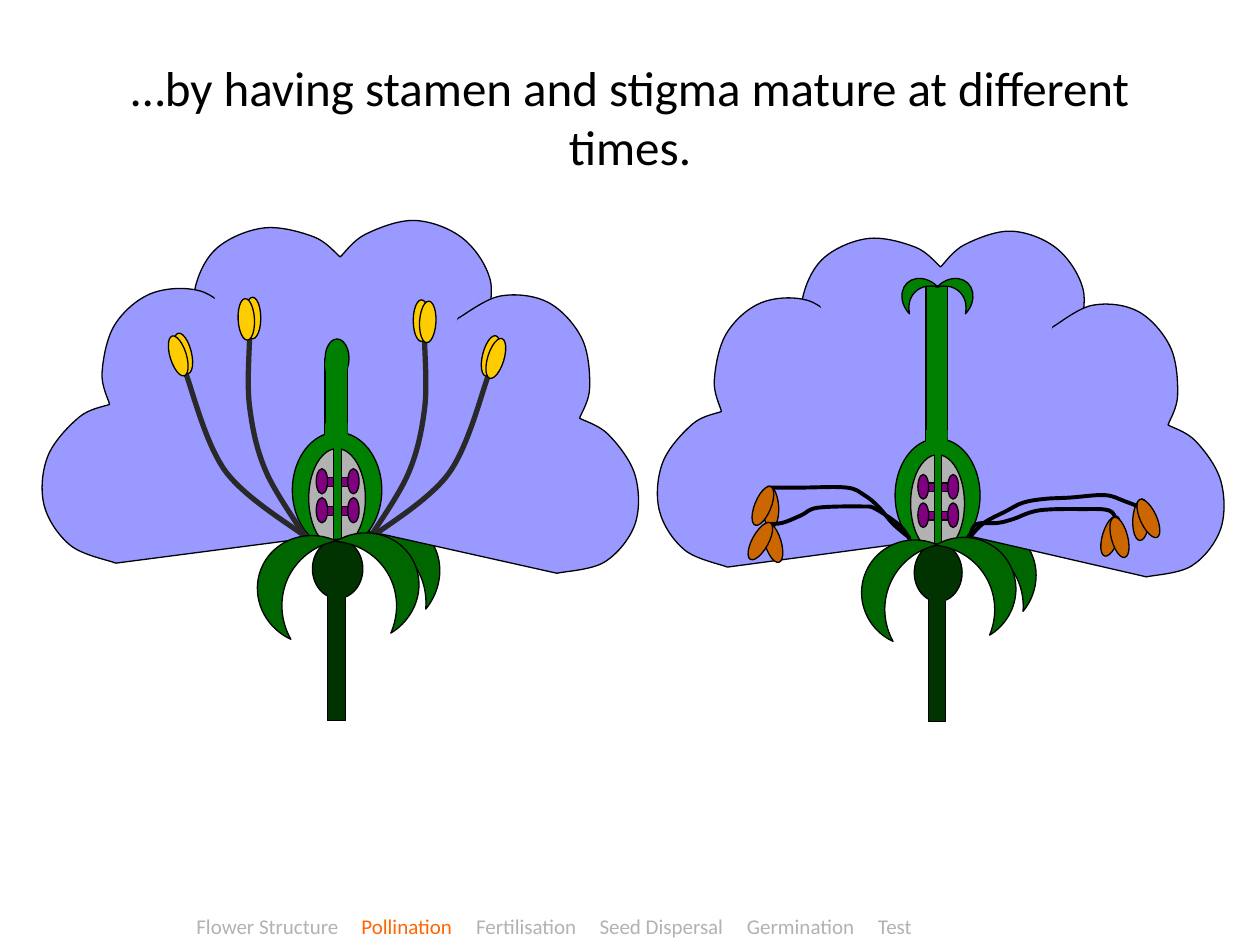
from collections import namedtuple

from lxml.etree import SubElement
from pptx import Presentation
from pptx.dml.color import RGBColor
from pptx.enum.shapes import MSO_SHAPE as Kind
from pptx.enum.text import MSO_ANCHOR as Anchor, PP_ALIGN as Align
from pptx.oxml.ns import qn
from pptx.util import Pt

PX = 9144  # EMU in one px: 100 px to the inch

BLACK = RGBColor(0x00, 0x00, 0x00)
GREY = RGBColor(0xB2, 0xB2, 0xB2)
ORANGE = RGBColor(0xFF, 0x66, 0x00)
LILAC = RGBColor(0x99, 0x99, 0xFF)
GREEN = RGBColor(0x00, 0x80, 0x00)
SEPAL_GREEN = RGBColor(0x00, 0x66, 0x00)
STEM_GREEN = RGBColor(0x00, 0x33, 0x00)
PURPLE = RGBColor(0x80, 0x00, 0x80)
YELLOW = RGBColor(0xFF, 0xCC, 0x00)
BROWN = RGBColor(0xCC, 0x66, 0x00)
CHARCOAL = RGBColor(0x29, 0x29, 0x29)

# A frame maps the flower's own px to slide px.
Frame = namedtuple("Frame", "x_scale x_shift y_scale y_shift")
PLAIN = Frame(1, 0, 1, 0)
SMALLER = Frame(0.95, 490, 0.98, 12)

# Each petal is a first lobe, the point it grows from, and a second lobe.
PETALS = [
    ([(270, 204), (249, 188), (209, 181), (171, 198), (154, 233), (159, 271)],
     [(281, 428)],
     [(386, 261), (389, 222), (367, 189), (329, 175), (290, 186), (270, 204)]),
    ([(460, 332), (468, 308), (462, 269), (435, 240), (397, 235), (363, 253)],
     [(254, 413)],
     [(442, 455), (480, 446), (504, 416), (504, 377), (483, 345), (460, 332)]),
    ([(87, 321), (63, 331), (38, 362), (35, 401), (56, 433), (92, 447)],
     [(284, 422)],
     [(191, 253), (159, 231), (120, 233), (91, 258), (81, 296), (87, 321)]),
]

YOUNG_FILAMENTS = [
    [(292, 429), (324, 376), (337, 324), (337, 271)],
    [(291, 429), (356, 376), (388, 297)],
]
YOUNG_ANTHERS = [(328, 238, 0), (333, 239, 3.1), (383, 266, 14.1), (387, 268, 17)]
MIRROR_SUM = 535  # x of a point plus x of its mirrored point
MIRROR_RISE = 2

OLD_BACK_ANTHERS = [(899, 396, 3.1), (875, 409, 17), (605, 386, -3.1), (607, 414, -17)]
# Each stamen is a filament and the anther in front of it.
OLD_STAMENS = [
    ([(770, 425), (775, 416), (792, 415), (804, 412), (825, 405), (860, 404),
      (880, 405), (886, 412)], (882, 410, -15)),
    ([(770, 426), (781, 415), (798, 406), (812, 399), (829, 396), (849, 395),
      (877, 393), (893, 398), (906, 403)], (905, 395, -24.7)),
    ([(722, 428), (714, 417), (695, 404), (685, 402), (649, 403), (636, 409),
      (621, 415), (609, 416)], (597, 413, 28.7)),
    ([(722, 427), (709, 416), (697, 402), (686, 393), (672, 387), (636, 387),
      (609, 387)], (599, 385, 22)),
]

MENU = ["Flower Structure", "Pollination", "Fertilisation", "Seed Dispersal",
        "Germination", "Test"]
MENU_STOPS = [131, 222, 320, 437, 541]


def add_part(shapes, kind, box, fill, rotation=0, outlined=True, frame=PLAIN):
    x, y, width, height = box
    part = shapes.add_shape(
        kind,
        round((x * frame.x_scale + frame.x_shift) * PX),
        round((y * frame.y_scale + frame.y_shift) * PX),
        round(width * frame.x_scale * PX),
        round(height * frame.y_scale * PX))
    part.rotation = rotation
    paint(part, fill, BLACK if outlined else None, 0.75)


def add_outline(shapes, lobes, fill, line, weight, frame=PLAIN):
    """Draw curved lobes joined by straight lines, closed if there is a fill."""
    corners = [((x * frame.x_scale + frame.x_shift) * PX,
                (y * frame.y_scale + frame.y_shift) * PX)
               for lobe in lobes for x, y in lobe]
    builder = shapes.build_freeform(*corners[0], scale=1.0)
    builder.add_line_segments(corners[1:], close=fill is not None)
    outline = builder.convert_to_shape()
    bend(outline, [len(lobe) for lobe in lobes])
    paint(outline, fill, line, weight)


def bend(outline, lobe_sizes):
    """Turn the lines within each lobe into Bézier curves through its points."""
    geometry = outline._element.find(".//" + qn("a:path"))
    points = [(int(point.get("x")), int(point.get("y")))
              for point in geometry.iter(qn("a:pt"))]
    lines = geometry.findall(qn("a:lnTo"))
    start = 0
    for size in lobe_sizes:
        lobe = points[start:start + size]
        ends = [lobe[0], *lobe, lobe[-1]]
        for line, p0, p1, p2, p3 in zip(lines[start:], ends, ends[1:], ends[2:], ends[3:]):
            line.tag = qn("a:cubicBezTo")
            controls = [[b + (c - a) / 6 for a, b, c in zip(p0, p1, p2)],
                        [c - (d - b) / 6 for b, c, d in zip(p1, p2, p3)]]
            for index, (x, y) in enumerate(controls):
                control = SubElement(line, qn("a:pt"), x=str(round(x)), y=str(round(y)))
                line.insert(index, control)
        start += size


def paint(shape, fill, line, weight):
    shape._element.remove(shape._element.find(qn("p:style")))
    shape.shadow.inherit = False
    if fill is None:
        shape.fill.background()
    else:
        shape.fill.solid()
        shape.fill.fore_color.rgb = fill
    if line is None:
        shape.line.fill.background()
    else:
        shape.line.color.rgb = line
        shape.line.width = Pt(weight)


def add_anther(shapes, anther, fill):
    x, y, rotation = anther
    add_part(shapes, Kind.OVAL, (x, y, 13, 33), fill, rotation)


def add_petals(shapes, frame):
    add_part(shapes, Kind.MOON, (297, 397, 46, 84), SEPAL_GREEN, 129.4, frame=frame)
    for lobes in PETALS:
        add_outline(shapes, lobes, LILAC, BLACK, 0.75, frame)
    for box, rotation in [((309, 205, 45, 160), 14.4), ((185, 207, 44, 155), -15.9)]:
        add_part(shapes, Kind.ROUNDED_RECTANGLE, box, LILAC, rotation, False, frame)
    add_part(shapes, Kind.OVAL, (232, 343, 71, 92), GREEN, frame=frame)


def add_ovary(shapes, frame):
    add_part(shapes, Kind.OVAL, (245, 356, 45, 79), GREY, frame=frame)
    add_part(shapes, Kind.RECTANGLE, (260, 473, 14, 99), STEM_GREEN, frame=frame)
    add_part(shapes, Kind.RECTANGLE, (265, 350, 6, 79), GREEN, frame=frame)
    add_part(shapes, Kind.RECTANGLE, (258, 336, 18, 20), GREEN, outlined=False, frame=frame)
    for y in (372, 395):
        for stalk_x, ovule_x in [(271, 276), (258, 251)]:
            add_part(shapes, Kind.RECTANGLE, (stalk_x, y + 7, 7, 7), PURPLE, frame=frame)
            add_part(shapes, Kind.OVAL, (ovule_x, y, 9, 20), PURPLE, frame=frame)


def add_base(shapes, frame):
    add_part(shapes, Kind.OVAL, (248, 428, 40, 47), STEM_GREEN, frame=frame)
    add_part(shapes, Kind.MOON, (285, 412, 45, 85), SEPAL_GREEN, 148.9, frame=frame)
    add_part(shapes, Kind.MOON, (206, 416, 45, 86), SEPAL_GREEN, 24.8, frame=frame)
    add_part(shapes, Kind.OVAL, (259, 454, 17, 25), STEM_GREEN, outlined=False, frame=frame)


def add_flower_with_ripe_stamens(shapes):
    add_petals(shapes, PLAIN)
    add_part(shapes, Kind.RECTANGLE, (258, 285, 18, 59), GREEN)
    add_ovary(shapes, PLAIN)
    for points in YOUNG_FILAMENTS:
        mirrored = [(MIRROR_SUM - x, y - MIRROR_RISE) for x, y in points]
        for side in (points, mirrored):
            add_outline(shapes, [side], None, CHARCOAL, 3)
    for x, y, rotation in YOUNG_ANTHERS:
        add_anther(shapes, (x, y, rotation), YELLOW)
        add_anther(shapes, (MIRROR_SUM - x - 13, y - MIRROR_RISE, -rotation), YELLOW)
    add_base(shapes, PLAIN)
    add_part(shapes, Kind.OVAL, (258, 269, 19, 31), GREEN)
    add_part(shapes, Kind.OVAL, (258, 274, 18, 31), GREEN, outlined=False)


def add_flower_with_ripe_stigma(shapes):
    add_petals(shapes, SMALLER)
    add_part(shapes, Kind.RECTANGLE, (735, 227, 17, 123), GREEN)
    for x, rotation in [(717, 46.6), (752, 133.2)]:
        add_part(shapes, Kind.MOON, (x, 216, 19, 31), GREEN, rotation)
    add_ovary(shapes, SMALLER)
    for anther in OLD_BACK_ANTHERS:
        add_anther(shapes, anther, BROWN)
    add_base(shapes, SMALLER)
    for filament, anther in OLD_STAMENS:
        add_outline(shapes, [filament], None, BLACK, 2.25)
        add_anther(shapes, anther, BROWN)


def add_text(page, box, spans, size):
    """Add one paragraph of (text, colour) spans; return its text frame."""
    text_frame = page.shapes.add_textbox(*(length * PX for length in box)).text_frame
    text_frame.word_wrap = True
    for text, colour in spans:
        span = text_frame.paragraphs[0].add_run()
        span.text = text
        span.font.name = "Calibri"
        span.font.size = Pt(size)
        span.font.color.rgb = colour
    return text_frame


def add_menu(page, current):
    spans = [(("\t" if index else "") + name, ORANGE if name == current else GREY)
             for index, name in enumerate(MENU)]
    text_frame = add_text(page, (146, 720, 708, 30), spans, 12)
    stops = SubElement(text_frame.paragraphs[0]._p.get_or_add_pPr(), qn("a:tabLst"))
    for stop in MENU_STOPS:
        SubElement(stops, qn("a:tab"), pos=str(stop * PX), algn="l")


def main():
    deck = Presentation()
    deck.slide_width, deck.slide_height = 1000 * PX, 750 * PX
    page = deck.slides.add_slide(deck.slide_layouts[6])
    heading = "…by having stamen and stigma mature at different times."
    title = add_text(page, (50, 30, 900, 125), [(heading, BLACK)], 28)
    title.vertical_anchor = Anchor.MIDDLE
    title.paragraphs[0].alignment = Align.CENTER
    add_menu(page, "Pollination")
    add_flower_with_ripe_stigma(page.shapes.add_group_shape().shapes)
    add_flower_with_ripe_stamens(page.shapes.add_group_shape().shapes)
    deck.save("out.pptx")


if __name__ == "__main__":
    main()
